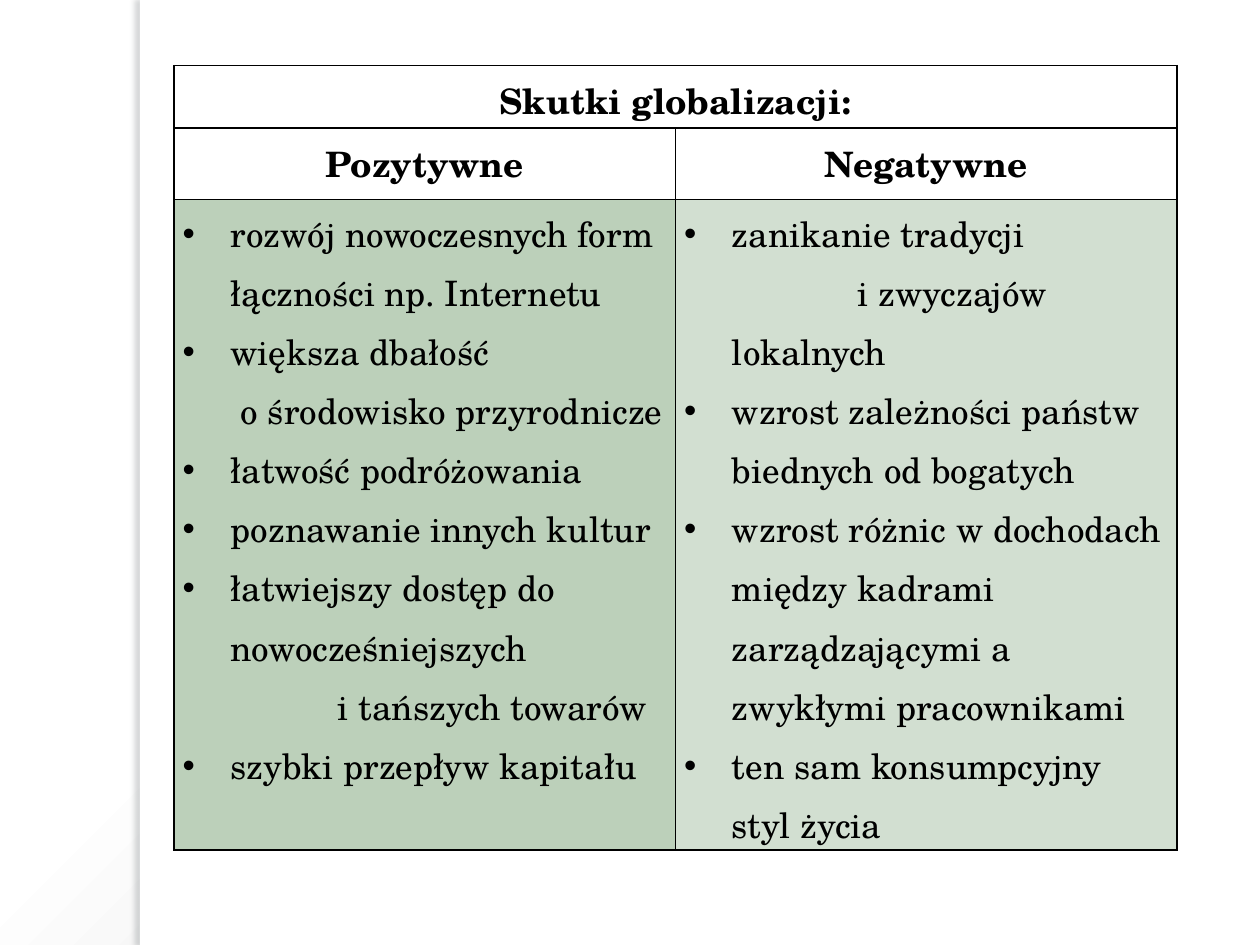
from pptx import Presentation
from pptx.dml.color import RGBColor
from pptx.enum.shapes import MSO_SHAPE as Shape
from pptx.enum.text import PP_ALIGN as Align
from pptx.oxml import parse_xml
from pptx.oxml.ns import nsdecls
from pptx.util import Inches, Pt

BLACK = RGBColor(0x00, 0x00, 0x00)
WHITE = RGBColor(0xFF, 0xFF, 0xFF)
GREEN = RGBColor(0xBC, 0xD0, 0xBA)
PALE_GREEN = RGBColor(0xD2, 0xDF, 0xD1)
FONT = "TeX Gyre Schola"
INDENT = Inches(0.38)

# Each item is its text and the tab stop of its indented line, if any
POSITIVE = [
    ("rozwój nowoczesnych form łączności np. Internetu", None),
    ("większa dbałość\v\to środowisko przyrodnicze", 0.08),
    ("łatwość podróżowania", None),
    ("poznawanie innych kultur", None),
    ("łatwiejszy dostęp do nowocześniejszych\v\ti tańszych towarów", 0.85),
    ("szybki przepływ kapitału", None),
]
NEGATIVE = [
    ("zanikanie tradycji\v\ti zwyczajów lokalnych", 1),
    ("wzrost zależności państw biednych od bogatych", None),
    ("wzrost różnic w dochodach między kadrami zarządzającymi "
     "a zwykłymi pracownikami", None),
    ("ten sam konsumpcyjny styl życia", None),
]


def style_paragraph(para, bold):
    para.line_spacing = 1.15
    para.font.name = FONT
    para.font.size = Pt(20)
    para.font.bold = bold
    para.font.color.rgb = BLACK


deck = Presentation()
deck.slide_width = Inches(10)
deck.slide_height = Inches(7.5)
slide = deck.slides.add_slide(deck.slide_layouts[6])

# Background: radial gradient from white to grey
stops = "".join(
    f'<a:gs pos="{position * 1000}"><a:srgbClr val="{color}"/></a:gs>'
    for position, color in [(0, "FFFFFF"), (40, "FFFFFF"), (100, "C5C5C5")])
slide.element.cSld.insert(0, parse_xml(
    f'<p:bg {nsdecls("p", "a")}><p:bgPr><a:gradFill rotWithShape="1">'
    f'<a:gsLst>{stops}</a:gsLst><a:path path="circle">'
    '<a:fillToRect l="-24000" t="-20000" r="124000" b="120000"/></a:path>'
    '</a:gradFill><a:effectLst/></p:bgPr></p:bg>'))

# White panel and its shaded left edge
for width in (8.89, 0.08):
    panel = slide.shapes.add_shape(
        Shape.RECTANGLE, Inches(1.11), 0, Inches(width), deck.slide_height)
    panel.shadow.inherit = False
    panel.fill.solid()
    panel.fill.fore_color.rgb = WHITE
    panel.line.fill.background()
edge_effects = panel.element.spPr.find(
    "{http://schemas.openxmlformats.org/drawingml/2006/main}effectLst")
edge_effects.append(parse_xml(
    f'<a:outerShdw {nsdecls("a")} blurRad="{Pt(3)}" dist="{Pt(3)}" '
    'dir="10800000" algn="r" rotWithShape="0"><a:srgbClr val="61686B">'
    '<a:alpha val="25000"/></a:srgbClr></a:outerShdw>'))

# Table
table = slide.shapes.add_table(
    3, 2, Inches(1.38), Inches(0.52), Inches(7.96), Inches(6.15)).table
table.first_row = False
table.horz_banding = False
for column in table.columns:
    column.width = Inches(3.98)
for row, height in zip(table.rows, (0.48, 0.57, 5.1)):
    row.height = Inches(height)

for cell in table.iter_cells():
    cell.margin_left = cell.margin_right = Inches(0.07)
    cell.margin_top = cell.margin_bottom = 0
    for side in "LRTB":
        cell._tc.tcPr.append(parse_xml(
            f'<a:ln{side} {nsdecls("a")} w="{Pt(1)}"><a:solidFill>'
            f'<a:srgbClr val="{BLACK}"/></a:solidFill></a:ln{side}>'))
    cell.fill.background()
table.cell(0, 0).merge(table.cell(0, 1))

headings = [(0, 0, "Skutki globalizacji:"), (1, 0, "Pozytywne"), (1, 1, "Negatywne")]
for row_index, column_index, heading in headings:
    para = table.cell(row_index, column_index).text_frame.paragraphs[0]
    para.text = heading
    para.alignment = Align.CENTER
    style_paragraph(para, bold=True)

for column_index, (items, color) in enumerate(
        [(POSITIVE, GREEN), (NEGATIVE, PALE_GREEN)]):
    cell = table.cell(2, column_index)
    cell.fill.solid()
    cell.fill.fore_color.rgb = color
    frame = cell.text_frame
    for index, (text, tab_stop) in enumerate(items):
        para = frame.paragraphs[0] if index == 0 else frame.add_paragraph()
        para.text = text
        properties = para._p.get_or_add_pPr()
        properties.set("marL", str(INDENT))
        properties.set("indent", str(-INDENT))
        properties.append(parse_xml(f'<a:buFont {nsdecls("a")} typeface="Arial"/>'))
        properties.append(parse_xml(f'<a:buChar {nsdecls("a")} char="•"/>'))
        if tab_stop:
            properties.append(parse_xml(
                f'<a:tabLst {nsdecls("a")}><a:tab '
                f'pos="{INDENT + Inches(tab_stop)}" algn="l"/></a:tabLst>'))
        style_paragraph(para, bold=False)

deck.save("out.pptx")
